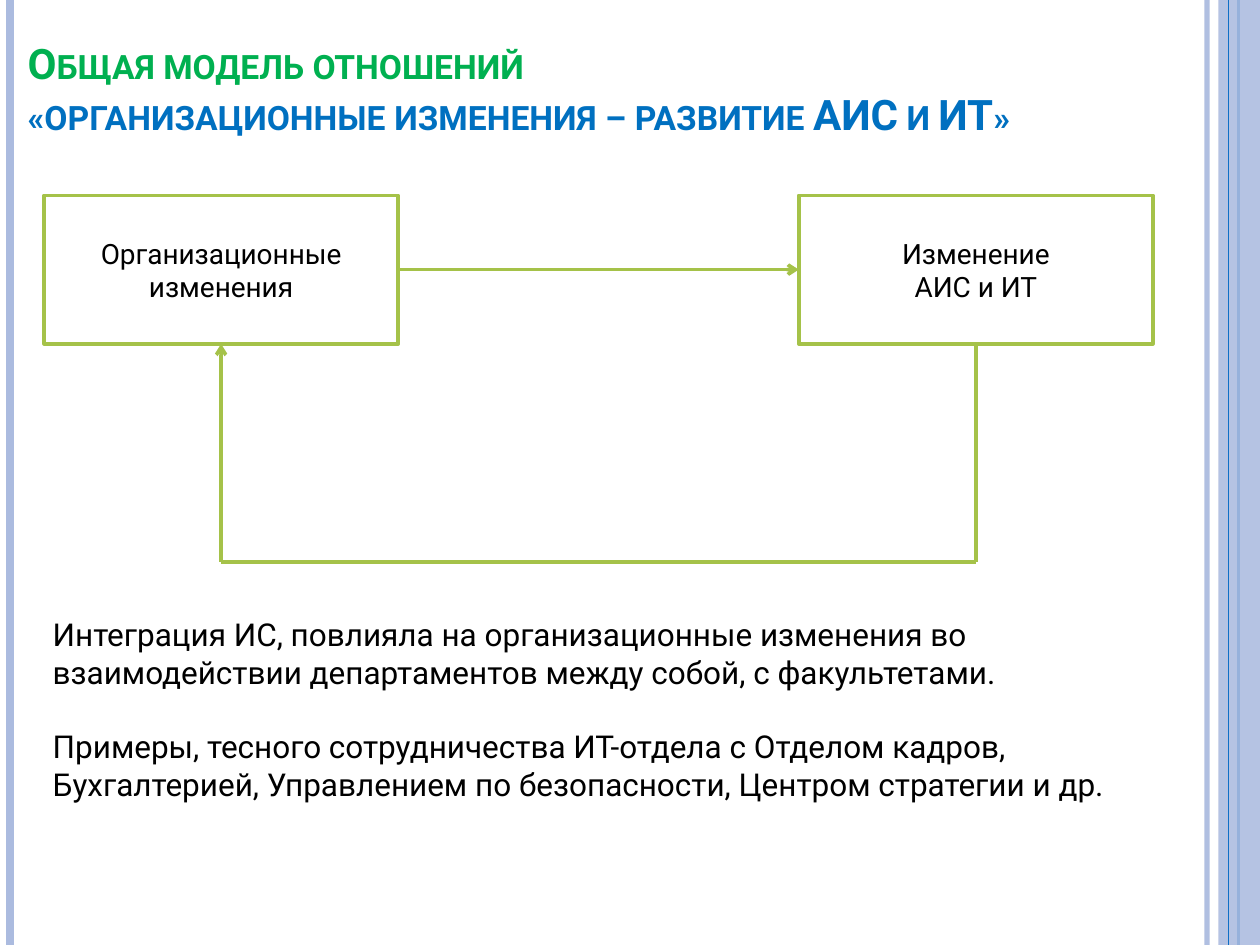
from lxml.etree import SubElement
from pptx import Presentation
from pptx.dml.color import RGBColor
from pptx.enum.shapes import MSO_CONNECTOR, MSO_SHAPE
from pptx.enum.text import MSO_ANCHOR, MSO_AUTO_SIZE, PP_ALIGN
from pptx.oxml.ns import qn
from pptx.util import Inches, Pt

# Content
FONT = "Roboto"
COLORS = {"pale": "ABBBDF", "blue": "0F6FC6", "green": "00B050",
          "title_blue": "0070C0", "lime": "A5C249", "white": "FFFFFF", "black": "000000"}
TITLE_LINES = [("Общая модель отношений", "green"),
               ("«организационные изменения – развитие АИС и ИТ»", "title_blue")]
BOXES = [(0.35, ["Организационные изменения"]), (6.34, ["Изменение", "АИС и ИТ"])]
NOTES = [
    "Интеграция ИС, повлияла на организационные изменения во взаимодействии "
    "департаментов между собой, с факультетами.",
    "Примеры, тесного сотрудничества ИТ-отдела с Отделом кадров, Бухгалтерией, "
    "Управлением по безопасности, Центром стратегии и др.",
]
# Vertical stripes: x, colour, width in points, opacity in percent
STRIPES_BEHIND = [(9.58, "pale", 3, 93), (0.08, "pale", 4.5, 100), (9.83, "blue", 1.5, 100)]
STRIPES_FRONT = [(9.75, "blue", 0.75, 100)]
SLIDE_W, SLIDE_H = 10, 7.5
BOX_TOP, BOX_W, BOX_H = 1.55, 2.81, 1.18
LOOP_Y = 4.46


def color(name):
    return RGBColor.from_string(COLORS[name])


def set_opacity(fill_parent, percent):
    if percent < 100:
        node = fill_parent.find(".//" + qn("a:srgbClr"))
        SubElement(node, qn("a:alpha")).set("val", str(percent * 1000))


def style_run(run, size, color_name):
    run.font.name, run.font.size = FONT, Pt(size)
    run.font.color.rgb = color(color_name)


def add_line(start, end, color_name, width, arrow=False):
    line = page.shapes.add_connector(MSO_CONNECTOR.STRAIGHT, *map(Inches, start + end))
    line.line.color.rgb = color(color_name)
    line.line.width = Pt(width)
    SubElement(line._element.spPr, qn("a:effectLst"))
    if arrow:
        SubElement(line.line._get_or_add_ln(), qn("a:tailEnd")).set("type", "arrow")
    return line


def add_stripes(stripes):
    for x, color_name, width, opacity in stripes:
        stripe = add_line((x, 0), (x, SLIDE_H), color_name, width)
        set_opacity(stripe.line._get_or_add_ln(), opacity)


def add_rectangle(left, top, width, height, color_name):
    box = page.shapes.add_shape(MSO_SHAPE.RECTANGLE, *map(Inches, (left, top, width, height)))
    box.shadow.inherit = False
    box.fill.solid()
    box.fill.fore_color.rgb = color(color_name)
    box.line.fill.background()
    return box


deck = Presentation()
deck.slide_width, deck.slide_height = Inches(SLIDE_W), Inches(SLIDE_H)
page = deck.slides.add_slide(deck.slide_layouts[5])

# Side stripes
add_stripes(STRIPES_BEHIND)
band = add_rectangle(9.67, 0, 0.33, SLIDE_H, "pale")
set_opacity(band._element.spPr, 87)
add_stripes(STRIPES_FRONT)

# Title
title = page.shapes.title
title.left, title.top, title.width, title.height = map(Inches, (0.12, 0.09, 8.98, 1.06))
frame = title.text_frame
frame.text = "\v".join(text for text, _ in TITLE_LINES)
frame.word_wrap = True
frame.auto_size = MSO_AUTO_SIZE.NONE
frame.vertical_anchor = MSO_ANCHOR.BOTTOM
heading = frame.paragraphs[0]
heading.alignment = PP_ALIGN.LEFT
for run, (_, color_name) in zip(heading.runs, TITLE_LINES):
    style_run(run, 24, color_name)
    run.font.bold = True
    run._r.get_or_add_rPr().set("cap", "small")

# Two boxes
boxes = []
for left, lines in BOXES:
    box = add_rectangle(left, BOX_TOP, BOX_W, BOX_H, "white")
    box.line.color.rgb = color("lime")
    box.line.width = Pt(2)
    box.text_frame.text = "\n".join(lines)
    box.text_frame.word_wrap = True
    box.text_frame.vertical_anchor = MSO_ANCHOR.MIDDLE
    for paragraph in box.text_frame.paragraphs:
        paragraph.alignment = PP_ALIGN.CENTER
        style_run(paragraph.runs[0], 16, "black")
    boxes.append(box)

# Forward arrow and return loop
source, target = boxes
source_x, target_x = (left + BOX_W / 2 for left, _ in BOXES)
middle, bottom = BOX_TOP + BOX_H / 2, BOX_TOP + BOX_H
forward = add_line((BOXES[0][0] + BOX_W, middle), (BOXES[1][0], middle), "lime", 2, arrow=True)
forward.begin_connect(source, 3)
forward.end_connect(target, 1)
down = add_line((target_x, bottom), (target_x, LOOP_Y), "lime", 2)
down.begin_connect(target, 2)
add_line((target_x, LOOP_Y), (source_x, LOOP_Y), "lime", 2)
back = add_line((source_x, LOOP_Y), (source_x, bottom), "lime", 2, arrow=True)
back.end_connect(source, 2)

# Notes below the diagram
notes = page.shapes.add_textbox(*map(Inches, (0.32, 4.83, 9.29, 1.62)))
notes.text_frame.text = "\n".join(NOTES)
notes.text_frame.word_wrap = True
for index, paragraph in enumerate(notes.text_frame.paragraphs):
    paragraph.space_before = Pt(21 if index else 0)
    style_run(paragraph.runs[0], 18, "black")

deck.save("out.pptx")
